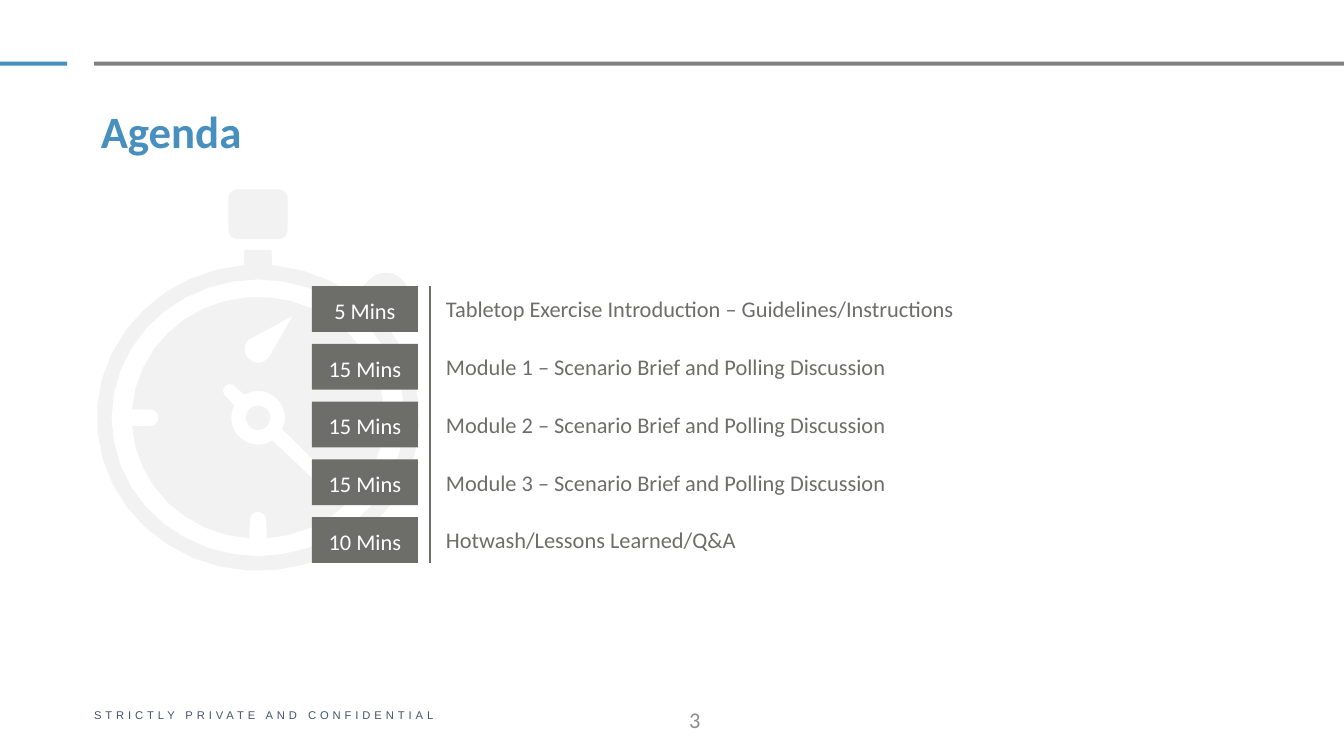
from math import cos, radians, sin

from lxml.etree import SubElement
from pptx import Presentation
from pptx.dml.color import RGBColor
from pptx.enum.shapes import MSO_CONNECTOR, MSO_SHAPE
from pptx.enum.text import MSO_ANCHOR as Anchor, MSO_AUTO_SIZE as AutoSize, PP_ALIGN as Align
from pptx.oxml.ns import qn
from pptx.util import Inches, Pt

BLUE = RGBColor(0x47, 0x8F, 0xBF)
BAR_GRAY = RGBColor(0x80, 0x80, 0x80)
DARK_GRAY = RGBColor(0x6D, 0x6E, 0x6A)
NUMBER_GRAY = RGBColor(0x8C, 0x8C, 0x8C)
PALE_GRAY = RGBColor(0xF2, 0xF2, 0xF2)
NAVY = RGBColor(0x44, 0x54, 0x6A)
WHITE = RGBColor(0xFF, 0xFF, 0xFF)

TITLE = "Agenda"
FOOTER = "STRICTLY PRIVATE AND CONFIDENTIAL"
PAGE_NUMBER = "3"
AGENDA = [
    ("5 Mins", "Tabletop Exercise Introduction – Guidelines/Instructions"),
    ("15 Mins", "Module 1 – Scenario Brief and Polling Discussion"),
    ("15 Mins", "Module 2 – Scenario Brief and Polling Discussion"),
    ("15 Mins", "Module 3 – Scenario Brief and Polling Discussion"),
    ("10 Mins", "Hotwash/Lessons Learned/Q&A"),
]

WIDTH, HEIGHT = 10, 5.5
MARGIN = 0.7
ROWS_TOP, ROW_PITCH = 2.13, 0.43
TIME_LEFT, TIME_WIDTH, TIME_HEIGHT = 2.32, 0.79, 0.34
DIVIDER_X = 3.2
TOPIC_LEFT, TOPIC_WIDTH, TOPIC_HEIGHT = 3.22, 5.8, 0.32
CENTER_X, CENTER_Y = 1.92, 3.11


def inches(*values):
    return [Inches(value) for value in values]


def arc(x, y, radius_x, start, end, radius_y=None, step=10):
    """Points on an ellipse; degrees run clockwise from the right."""
    radius_y = radius_y or radius_x
    count = max(2, round(abs(end - start) / step))
    angles = [radians(start + (end - start) * i / count) for i in range(count + 1)]
    return [(x + radius_x * cos(a), y + radius_y * sin(a)) for a in angles]


def center_arc(radius_x, start, end, radius_y=None):
    return arc(CENTER_X, CENTER_Y, radius_x, start, end, radius_y)


def stopwatch_contours():
    """Nested outlines that alternate between filled and open areas."""
    case = (center_arc(1.2, -53, -85, 1.14)
            + [(2.02, 1.86), (1.82, 1.86)]
            + center_arc(1.2, -95, -397, 1.14)
            + arc(2.87, 2.2, 0.17, 45, -135))
    rim = center_arc(1.09, 0, 360, 1.03)
    dial = (center_arc(0.94, -4, -176, 0.9)
            + arc(1.12, CENTER_Y, 0.06, -90, 90)
            + center_arc(0.94, 176, 94, 0.9)
            + arc(CENTER_X, 3.87, 0.06, 180, 360)
            + center_arc(0.94, 86, 4, 0.9)
            + arc(2.71, CENTER_Y, 0.06, 90, 270))
    crown = (arc(1.77, 1.48, 0.07, 180, 270) + arc(2.07, 1.48, 0.07, 270, 360)
             + arc(2.07, 1.71, 0.07, 0, 90) + arc(1.77, 1.71, 0.07, 90, 180))
    dart = [(2.18, 2.35)] + arc(CENTER_X, 2.6, 0.1, 25, 225)
    hand = (arc(2.48, 3.64, 0.05, -45, 135) + center_arc(0.2, 58, 207)
            + arc(1.71, 2.91, 0.05, 135, 315) + center_arc(0.2, 240, 385))
    hub = center_arc(0.09, 0, 360)
    return [case, rim, dial, crown, dart, hand, hub]


def paint(shape, color):
    shape.shadow.inherit = False
    shape.fill.solid()
    shape.fill.fore_color.rgb = color
    shape.line.fill.background()


def add_block(page, left, top, width, height, color):
    block = page.shapes.add_shape(MSO_SHAPE.RECTANGLE, *inches(left, top, width, height))
    paint(block, color)
    return block


def add_box(page, left, top, width, height):
    return page.shapes.add_textbox(*inches(left, top, width, height))


def write(box, text, size, color, font="Calibri", bold=False, align=Align.LEFT,
          anchor=Anchor.MIDDLE, spacing=None, wrap=True):
    frame = box.text_frame
    frame.text = text
    frame.word_wrap = wrap
    frame.vertical_anchor = anchor
    para = frame.paragraphs[0]
    para.alignment = align
    para.line_spacing = spacing
    span = para.runs[0]
    span.font.name, span.font.size, span.font.bold = font, Pt(size), bold
    span.font.color.rgb = color
    return span


def clear_insets(box):
    frame = box.text_frame
    frame.margin_left = frame.margin_top = frame.margin_right = frame.margin_bottom = 0


def add_stopwatch(page):
    contours = [[(x * 1000, y * 1000) for x, y in points] for points in stopwatch_contours()]
    builder = page.shapes.build_freeform(*contours[0][0], scale=Inches(1) / 1000)
    for index, points in enumerate(contours):
        if index:
            builder.move_to(*points[0])
        builder.add_line_segments(points[1:], close=True)
    paint(builder.convert_to_shape(), PALE_GRAY)


def add_frame(page):
    add_block(page, 0, 0.46, 0.5, 0.03, BLUE)
    add_block(page, MARGIN, 0.46, WIDTH - MARGIN, 0.03, BAR_GRAY)
    footer = add_box(page, MARGIN, 5.22, 3.06, 0.2)
    clear_insets(footer)
    span = write(footer, FOOTER, 6, NAVY, font="Arial", spacing=1.1, wrap=False)
    span.font._element.set("spc", "210")
    number = add_box(page, 3.06, 5.21, 2.25, 0.29)
    write(number, PAGE_NUMBER, 12, NUMBER_GRAY, align=Align.RIGHT)


def add_title(page):
    title = page.shapes.title
    title.left, title.top, title.width, title.height = inches(0.75, 0.76, 8.47, 0.41)
    clear_insets(title)
    write(title, TITLE, 24, BLUE, bold=True, anchor=Anchor.BOTTOM)
    title.text_frame.auto_size = AutoSize.NONE


def add_agenda(page):
    for row, (time, topic) in enumerate(AGENDA):
        top = ROWS_TOP + row * ROW_PITCH
        label = add_box(page, TOPIC_LEFT, top, TOPIC_WIDTH, TOPIC_HEIGHT)
        write(label, topic, 12, DARK_GRAY, anchor=Anchor.TOP, spacing=1.1)
        label.text_frame.auto_size = AutoSize.SHAPE_TO_FIT_TEXT
        block = add_block(page, TIME_LEFT, top, TIME_WIDTH, TIME_HEIGHT, DARK_GRAY)
        write(block, time, 12, WHITE, align=Align.CENTER, spacing=1.1)
    bottom = ROWS_TOP + (len(AGENDA) - 1) * ROW_PITCH + TIME_HEIGHT
    divider = page.shapes.add_connector(
        MSO_CONNECTOR.STRAIGHT, *inches(DIVIDER_X, ROWS_TOP, DIVIDER_X, bottom))
    divider.line.color.rgb = DARK_GRAY
    divider.line.width = Pt(0.75)
    SubElement(divider._element.spPr, qn("a:effectLst"))


def main():
    deck = Presentation()
    deck.slide_width, deck.slide_height = inches(WIDTH, HEIGHT)
    page = deck.slides.add_slide(deck.slide_layouts[5])
    add_frame(page)
    add_stopwatch(page)
    add_title(page)
    add_agenda(page)
    deck.save("out.pptx")


if __name__ == "__main__":
    main()
